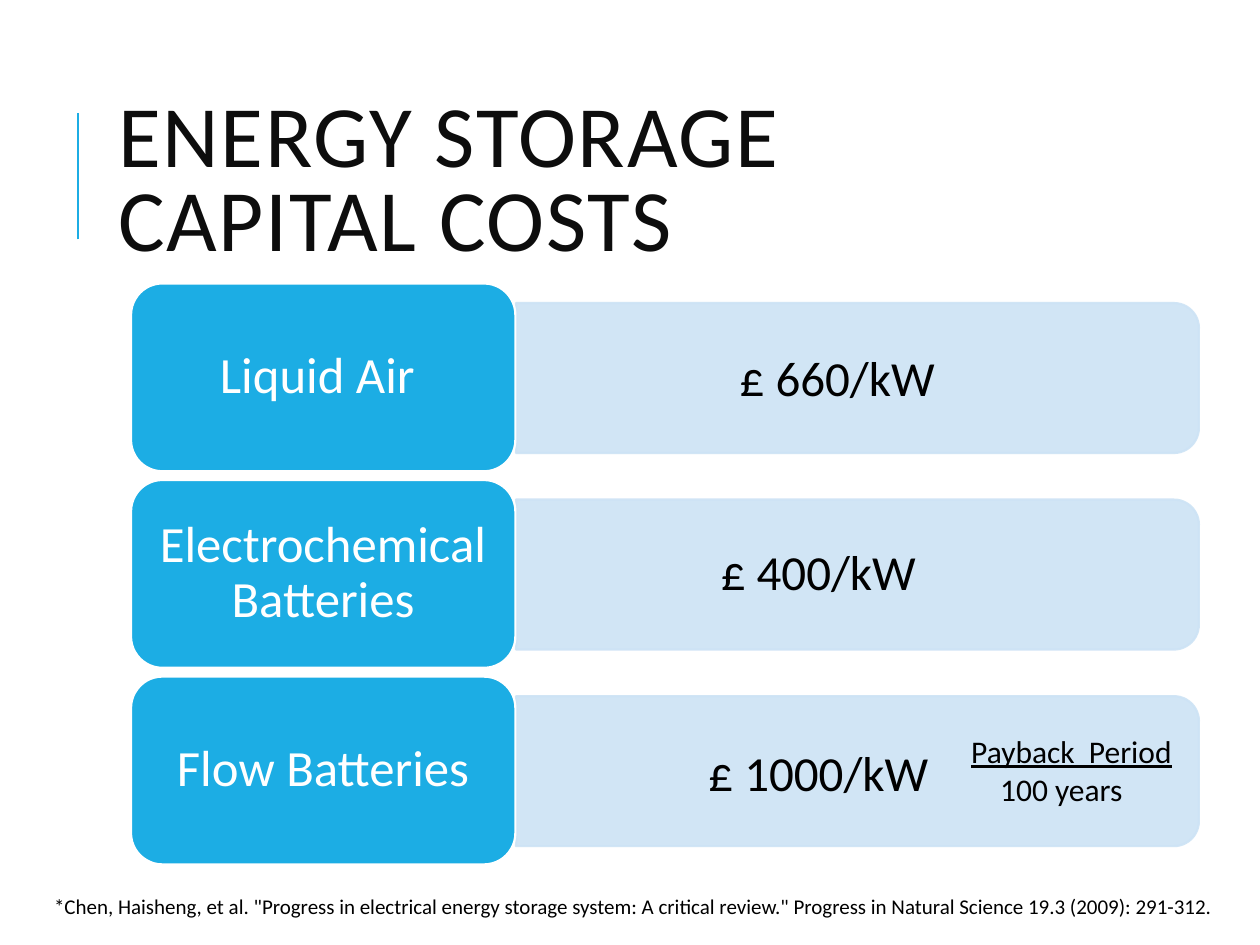
"""Build a slide comparing the capital costs of energy storage."""
from lxml.etree import SubElement
from pptx import Presentation
from pptx.dml.color import RGBColor
from pptx.enum.shapes import MSO_CONNECTOR, MSO_SHAPE
from pptx.enum.text import MSO_ANCHOR, MSO_AUTO_SIZE, PP_ALIGN
from pptx.oxml.ns import qn
from pptx.util import Inches, Pt
from dataclasses import dataclass


@dataclass(frozen=True)
class Theme:
    font: str = "Calibri"
    blue: RGBColor = RGBColor.from_string("1CADE4")
    pale: RGBColor = RGBColor.from_string("CDE3F5")
    white: RGBColor = RGBColor.from_string("FFFFFF")
    ink: RGBColor = RGBColor.from_string("0D0D0D")
    black: RGBColor = RGBColor.from_string("000000")
    title: Pt = Pt(50)
    label: Pt = Pt(29)
    cost: Pt = Pt(28)
    note: Pt = Pt(18)
    cite: Pt = Pt(12)


theme = Theme()


def write(shape, lines, size, color, frame=None, para=None):
    """Fill a shape with styled paragraphs and return them."""
    body = shape.text_frame
    body.text = "\n".join(lines)
    for key, value in {"word_wrap": True, **(frame or {})}.items():
        setattr(body, key, value)
    for item in body.paragraphs:
        for key, value in (para or {}).items():
            setattr(item, key, value)
        for run in item.runs:
            run.font.color.rgb = color
            for key, value in {"name": theme.font, "size": size}.items():
                setattr(run.font, key, value)
    return body.paragraphs


def paint(shape, fill, edge):
    """Give a shape a plain fill and outline."""
    shape.shadow.inherit = False
    shape.fill.solid()
    shape.fill.fore_color.rgb = fill
    shape.line.color.rgb = edge
    shape.line.width = Pt(1.25)


deck = Presentation()
deck.slide_width, deck.slide_height = Inches(10), Inches(7.5)
slide = deck.slides.add_slide(deck.slide_layouts[6])
shapes = slide.shapes

rule = shapes.add_connector(
    MSO_CONNECTOR.STRAIGHT, Inches(0.62), Inches(1.9), Inches(0.62), Inches(0.9))
rule.line.color.rgb = theme.blue
rule.line.width = Pt(1.5)
SubElement(rule._element.spPr, qn("a:effectLst"))

title = shapes.add_textbox(Inches(0.84), Inches(0.64), Inches(7.97), Inches(1.64))
head = write(title, ["ENERGY STORAGE CAPITAL COSTS"], theme.title, theme.ink,
             {"vertical_anchor": MSO_ANCHOR.MIDDLE}, {"line_spacing": 0.8})
head[0].runs[0].font._element.set("spc", "100")

inset = {
    "vertical_anchor": MSO_ANCHOR.MIDDLE,
    "margin_left": Inches(0.1), "margin_right": Inches(0.1),
    "margin_top": Inches(0.06), "margin_bottom": Inches(0.06),
}
mid = {"alignment": PP_ALIGN.CENTER}
grow = {"auto_size": MSO_AUTO_SIZE.SHAPE_TO_FIT_TEXT}
step = 1.56
for row, name in enumerate(["Liquid Air ", "Electrochemical Batteries", "Flow Batteries"]):
    top = row * step
    bar = shapes.add_shape(MSO_SHAPE.ROUND_2_SAME_RECTANGLE, Inches(6.21),
                           Inches(0.29 + top), Inches(1.19), Inches(5.42))
    bar.rotation = 90
    paint(bar, theme.pale, theme.pale)
    for tone in bar._element.spPr.iter(qn("a:srgbClr")):
        SubElement(tone, qn("a:alpha"), val="90000")
    tile = shapes.add_shape(MSO_SHAPE.ROUNDED_RECTANGLE, Inches(1.04),
                            Inches(2.25 + top), Inches(3.05), Inches(1.49))
    paint(tile, theme.blue, theme.white)
    write(tile, [name], theme.label, theme.white, inset, {**mid, "line_spacing": 0.9})

costs = [("£ 660/kW", 5.03, 2.71), ("£ 400/kW", 4.88, 4.25), ("£ 1000/kW", 4.88, 5.84)]
for cost, left, top in costs:
    box = shapes.add_textbox(Inches(left), Inches(top), Inches(3.23), Inches(0.57))
    write(box, [cost], theme.cost, theme.black, grow, mid)

note = shapes.add_textbox(Inches(7.61), Inches(5.76), Inches(2.69), Inches(0.71))
term, years = write(note, ["Payback  Period", "100 years"], theme.note, theme.black, grow)
term.runs[0].font.underline = True
years._p.get_or_add_pPr().set("marL", str(Inches(0.23)))

cite = shapes.add_textbox(Inches(0.18), Inches(7.04), Inches(9.7), Inches(0.3))
write(cite, ['*Chen, Haisheng, et al. "Progress in electrical energy storage system: '
             'A critical review." Progress in Natural Science 19.3 (2009): 291-312.'],
      theme.cite, theme.black, grow, mid)

deck.save("out.pptx")
